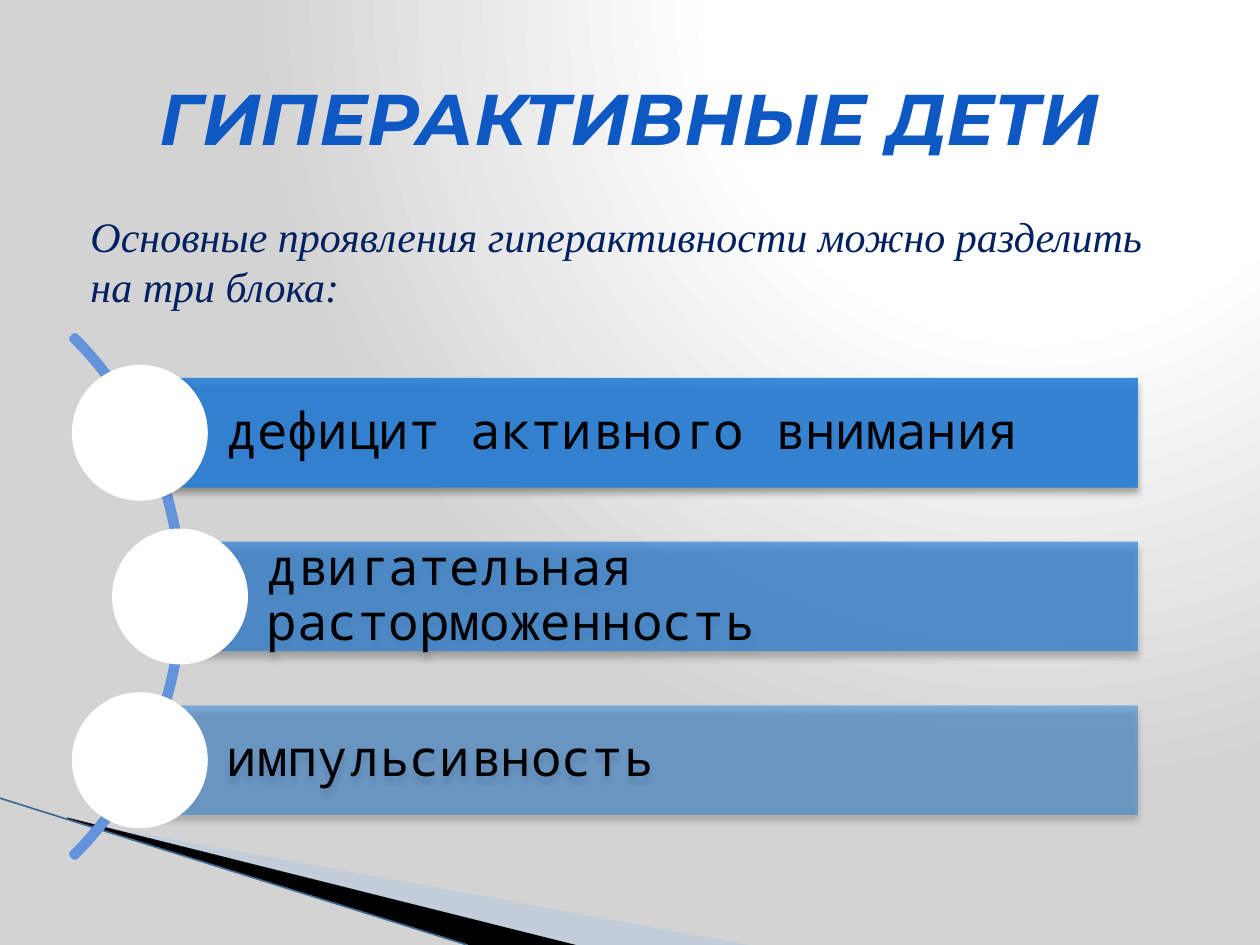
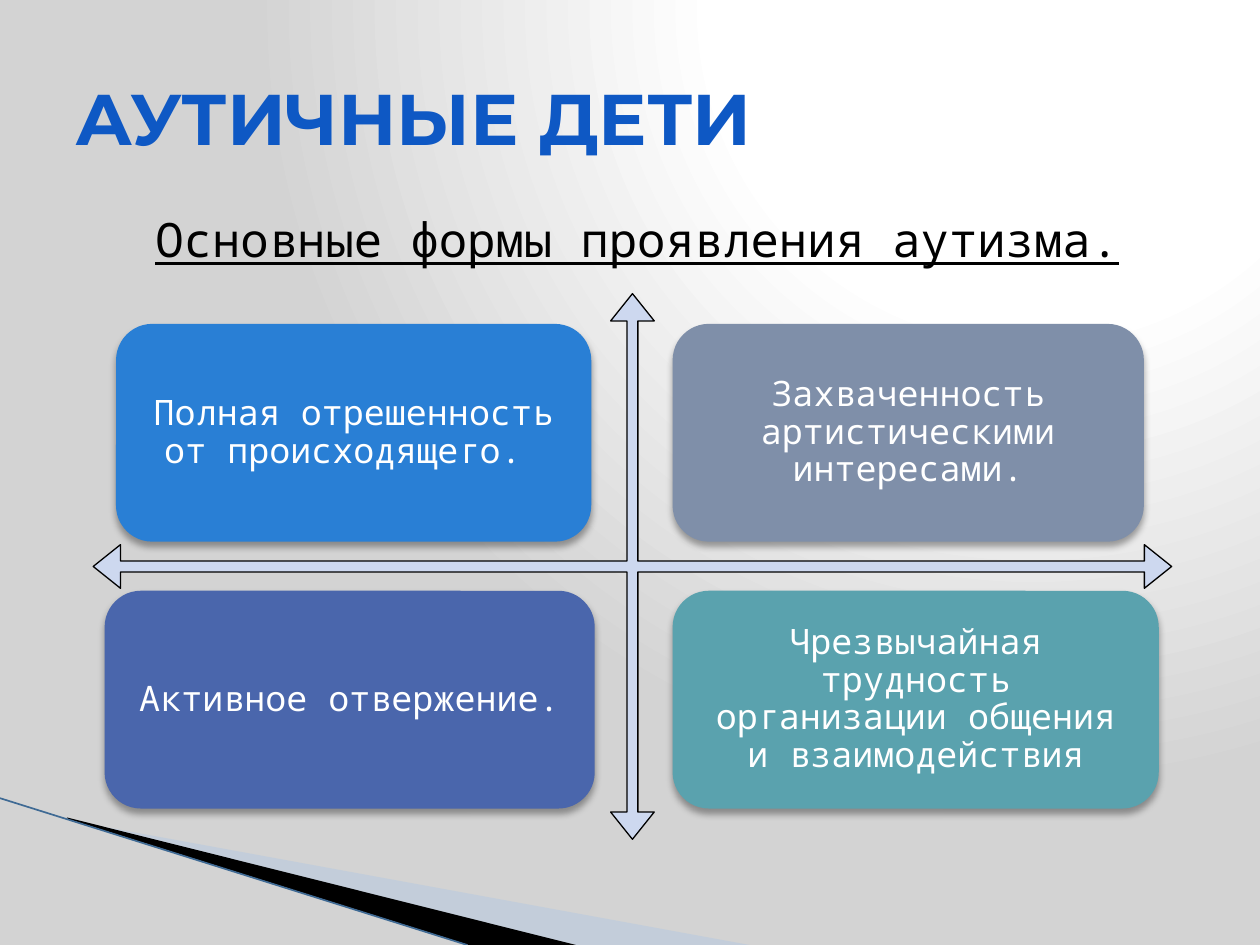
from lxml.etree import SubElement
from pptx import Presentation
from pptx.dml.color import RGBColor
from pptx.enum.shapes import MSO_CONNECTOR, MSO_SHAPE as Shape
from pptx.enum.text import MSO_ANCHOR as Anchor, MSO_AUTO_SIZE, PP_ALIGN as Align
from pptx.oxml import parse_xml
from pptx.oxml.ns import nsdecls, qn
from pptx.util import Cm, Pt

COLORS = {
    "white": "FFFFFF", "black": "000000", "grey": "D3D3D3",
    "title": "0E58C4", "navy": "002060", "blue": "297FD5",
    "arc": "6393DA", "axes": "CDD8EF", "slate": "7F8FA9",
    "indigo": "4A66AC", "teal": "5AA2AE",
    "pale wedge": "ABC6E6", "wedge edge": "3F6A94",
}
MONO = "Noto Sans Mono"
SERIF = "Times New Roman"
TITLE_FONT = "Montserrat"


def rgb(name):
    return RGBColor.from_string(COLORS[name])


def set_font(paragraph, name, size, color, bold=False, italic=False, underline=False):
    font = paragraph.font
    font.name, font.size = name, Pt(size)
    font.color.rgb = rgb(color)
    font.bold, font.italic, font.underline = bold, italic, underline


def fill_shape(shape, color, opacity=100):
    shape.shadow.inherit = False
    shape.fill.solid()
    shape.fill.fore_color.rgb = rgb(color)
    shape.line.fill.background()
    if opacity < 100:
        color_element = shape.element.spPr.find(qn("a:solidFill"))[0]
        SubElement(color_element, qn("a:alpha"), val=str(opacity * 1000))


def add_shape(slide, kind, left, top, width, height, color, opacity=100):
    shape = slide.shapes.add_shape(kind, Cm(left), Cm(top), Cm(width), Cm(height))
    fill_shape(shape, color, opacity)
    return shape


def add_drop_shadow(shape):
    effects = shape.element.spPr.find(qn("a:effectLst"))
    shadow = SubElement(effects, qn("a:outerShdw"), blurRad=str(Pt(4)),
                        dist=str(Pt(3)), dir="5400000", rotWithShape="0")
    color = SubElement(shadow, qn("a:srgbClr"), val=COLORS["black"])
    SubElement(color, qn("a:alpha"), val="35000")


def write_label(shape, text, size, color, alignment, left_inset, inset):
    frame = shape.text_frame
    frame.word_wrap = True
    frame.vertical_anchor = Anchor.MIDDLE
    frame.margin_left = Cm(left_inset)
    frame.margin_right = frame.margin_top = frame.margin_bottom = Cm(inset)
    paragraph = frame.paragraphs[0]
    paragraph.text = text
    paragraph.alignment = alignment
    paragraph.line_spacing = 0.9
    set_font(paragraph, MONO, size, color)


def set_background(master):
    master.background.fill.solid()
    properties = master.element.find(".//" + qn("p:bgPr"))
    stops = "".join(
        f'<a:gs pos="{position * 1000}"><a:srgbClr val="{COLORS[color]}"/></a:gs>'
        for position, color in ((0, "white"), (40, "white"), (100, "grey")))
    gradient = parse_xml(
        f'<a:gradFill {nsdecls("a")} rotWithShape="1"><a:gsLst>{stops}</a:gsLst>'
        '<a:path path="circle"><a:fillToRect l="65000" t="0" r="0" b="98000"/></a:path>'
        '</a:gradFill>')
    properties.replace(properties[0], gradient)


def add_wedge(slide, points, color, opacity=100):
    start, *others = [(Cm(x), Cm(y)) for x, y in points]
    builder = slide.shapes.build_freeform(*start)
    builder.add_line_segments(others)
    wedge = builder.convert_to_shape()
    fill_shape(wedge, color, opacity)
    return wedge


def add_corner(slide, layout):
    """Draw the corner wedges, then hand them to the layout shared by all slides."""
    pale = add_wedge(slide, [(1.4, 16.54), (15.11, 19.05), (11.58, 19.05), (1.4, 16.51)],
                     "pale wedge", 40)
    dark = add_wedge(slide, [(1.35, 16.48), (11.61, 19.05), (9.45, 19.05), (1.37, 16.51)],
                     "black")
    edge = slide.shapes.add_connector(MSO_CONNECTOR.STRAIGHT,
                                      Cm(0), Cm(16.09), Cm(9.42), Cm(19.05))
    edge.line.color.rgb = rgb("wedge edge")
    edge.line.width = Pt(0.95)
    SubElement(edge.element.spPr, qn("a:effectLst"))
    for shape in (pale, dark, edge):
        layout.shapes.element.append(shape.element)


def place_placeholders(layout):
    for index, top, height in ((0, 0.76, 3.18), (1, 4.11, 12.57)):
        placeholder = layout.placeholders[index]
        placeholder.left, placeholder.top = Cm(1.27), Cm(top)
        placeholder.width, placeholder.height = Cm(22.86), Cm(height)


def write_title(slide, text, alignment, italic=False):
    frame = slide.shapes.title.text_frame
    frame.auto_size = MSO_AUTO_SIZE.NONE
    frame.vertical_anchor = Anchor.MIDDLE
    paragraph = frame.paragraphs[0]
    paragraph.text = text
    paragraph.alignment = alignment
    set_font(paragraph, TITLE_FONT, 41, "title", bold=True, italic=italic)


def write_lead(slide, text, alignment, **font):
    frame = slide.placeholders[1].text_frame
    frame.auto_size = MSO_AUTO_SIZE.NONE
    paragraph = frame.paragraphs[0]
    paragraph.text = text
    paragraph.alignment = alignment
    paragraph.space_before = Pt(0)
    properties = paragraph._p.get_or_add_pPr()
    properties.set("marL", str(Cm(0.3)))
    properties.set("indent", "0")
    SubElement(properties, qn("a:buNone"))
    set_font(paragraph, **font)


def add_arc(slide):
    arc = add_shape(slide, Shape.BLOCK_ARC, -11.13, 4.62, 14.81, 14.81, "arc")
    for index, value in enumerate((189, 27, 0.004)):
        arc.adjustments[index] = value
    arc.line.color.rgb = rgb("arc")
    arc.line.width = Pt(4.33)


def add_symptom(slide, text, left, top, opacity):
    height, right, diameter = 2.21, 22.94, 2.74
    band = add_shape(slide, Shape.RECTANGLE, left, top, right - left, height,
                     "blue", opacity)
    add_drop_shadow(band)
    write_label(band, text, 29, "black", Align.LEFT, 1.75, 0.2)
    add_shape(slide, Shape.OVAL, left - diameter / 2, top + (height - diameter) / 2,
              diameter, diameter, "white")


def add_axes(slide):
    axes = add_shape(slide, Shape.QUAD_ARROW, 1.88, 5.92, 21.74, 11, "axes")
    for index, value in enumerate((0.02, 0.04, 0.05)):
        axes.adjustments[index] = value
    axes.line.color.rgb = rgb("black")
    axes.line.width = Pt(0.75)


def add_form(slide, text, left, top, width, color):
    card = add_shape(slide, Shape.ROUNDED_RECTANGLE, left, top, width, 4.39, color)
    add_drop_shadow(card)
    write_label(card, text, 20, "white", Align.CENTER, 0.42, 0.42)


def build_hyperactive(slide):
    write_title(slide, "ГИПЕРАКТИВНЫЕ ДЕТИ", Align.CENTER, italic=True)
    write_lead(slide, "Основные проявления гиперактивности можно разделить на три блока:",
               Align.LEFT, name=SERIF, size=24, color="navy", italic=True)
    add_arc(slide)
    symptoms = (("дефицит активного внимания", 2.82),
                ("двигательная расторможенность", 3.63),
                ("импульсивность", 2.82))
    for row, (text, left) in enumerate(symptoms):
        add_symptom(slide, text, left, 7.62 + 3.3 * row, 90 - 20 * row)


def build_autistic(slide):
    write_title(slide, "АУТИЧНЫЕ ДЕТИ", Align.LEFT)
    write_lead(slide, "Основные формы проявления аутизма.",
               Align.CENTER, name=MONO, size=27, color="black", underline=True)
    add_axes(slide)
    upper, lower = 6.53, 11.91
    add_form(slide, "Полная отрешенность от происходящего. ", 2.34, upper, 9.58, "blue")
    add_form(slide, "Захваченность артистическими интересами.", 13.56, upper, 9.5, "slate")
    add_form(slide, "Активное отвержение. ", 2.11, lower, 9.88, "indigo")
    add_form(slide, "Чрезвычайная трудность организации общения и взаимодействия",
             13.56, lower, 9.8, "teal")


def main():
    presentation = Presentation()
    presentation.slide_width, presentation.slide_height = Cm(25.4), Cm(19.05)
    layout = presentation.slide_layouts[1]

    # Shared look
    set_background(presentation.slide_master)
    place_placeholders(layout)

    # Slides
    hyperactive = presentation.slides.add_slide(layout)
    add_corner(hyperactive, layout)
    build_hyperactive(hyperactive)
    build_autistic(presentation.slides.add_slide(layout))
    presentation.save("out.pptx")


if __name__ == "__main__":
    main()
